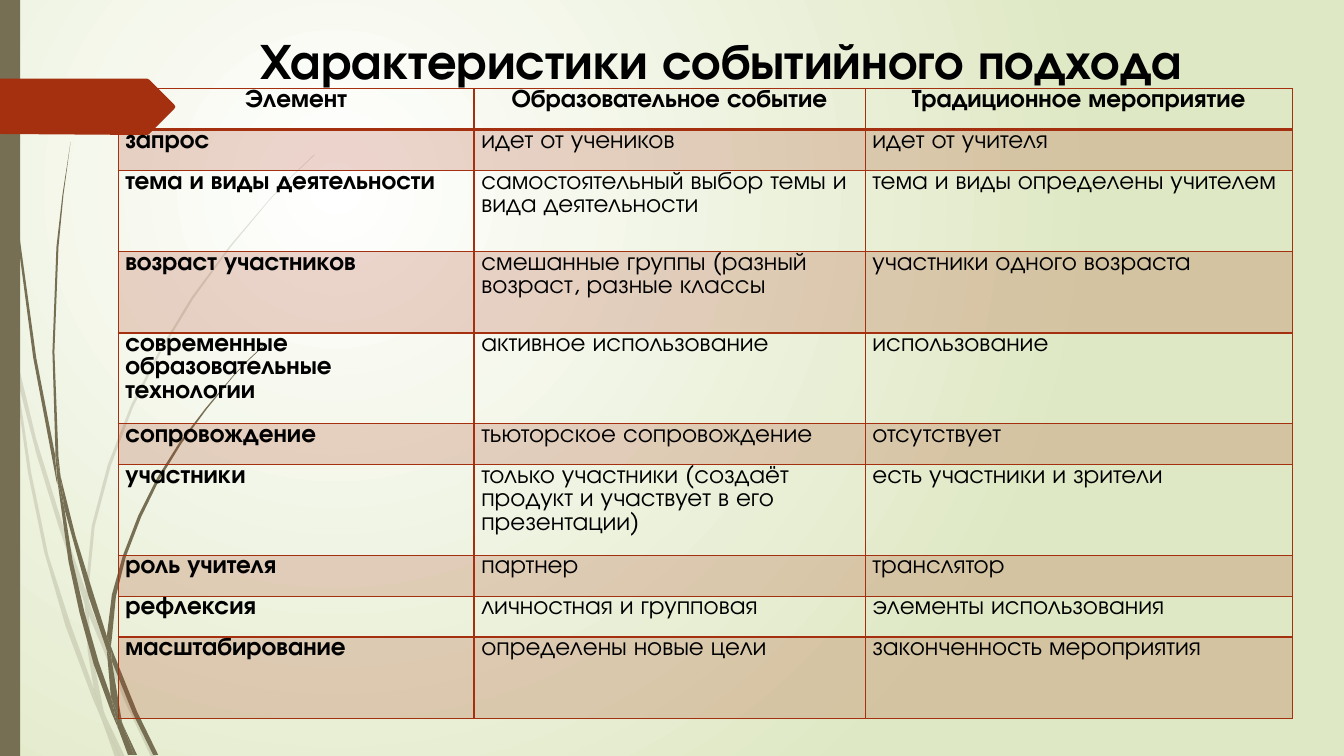
from dataclasses import dataclass

from lxml.etree import SubElement
from pptx import Presentation
from pptx.dml.color import RGBColor
from pptx.enum.shapes import MSO_SHAPE
from pptx.enum.text import MSO_ANCHOR, PP_ALIGN
from pptx.oxml.ns import qn
from pptx.util import Pt


@dataclass(frozen=True)
class Theme:
    font: str = "TeX Gyre Adventor"
    title_size: float = 36
    cell_size: float = 18
    text: str = "000000"
    accent: str = "A53010"
    stem: str = "766F54"
    center: str = "FFFFFF"
    edge: str = "DFE8C4"
    tint: int = 20


THEME = Theme()
GRID = Pt(0.72)  # outline points below are counted in this unit

# Grass blades: each row is one outline
PALE_BLADES = [
    [(11, 350), (9, 322), (0, 282), (0, 299), (10, 344)],
    [(58, 522), (84, 599), (85, 586), (62, 520), (36, 436), (14, 345), (17, 376), (36, 450)],
    [(92, 607), (88, 596), (88, 610), (123, 694), (150, 751), (155, 751), (127, 692)],
    [(119, 751), (124, 751), (105, 711)],
    [(93, 683), (70, 619), (48, 551), (31, 469), (17, 376), (11, 350), (28, 470), (44, 548),
     (65, 621), (92, 693), (101, 714), (99, 707)],
    [(84, 599), (87, 646), (93, 683), (96, 692), (105, 711), (103, 706), (91, 646), (88, 610), (88, 608)],
    [(88, 584), (94, 522), (110, 462), (132, 404), (160, 349), (192, 296), (229, 245), (268, 198),
     (290, 175), (312, 154), (312, 153), (289, 175), (268, 197), (228, 244), (190, 295), (158, 348),
     (130, 402), (107, 461), (91, 522), (85, 584), (85, 586), (88, 596)],
    [(101, 714), (114, 751), (119, 751)],
    [(88, 608), (88, 610), (88, 596), (85, 586), (84, 599)],
    [(96, 692), (93, 683), (99, 707), (101, 714), (119, 751), (105, 711)],
]
DARK_BLADES = [
    [(7, 110), (17, 233), (33, 355), (56, 477), (57, 481), (55, 457), (55, 453), (36, 355),
     (19, 232), (8, 109), (5, 48), (4, 0), (3, 0), (4, 48)],
    [(88, 592), (106, 645), (106, 633), (106, 631), (93, 590), (75, 532), (60, 472), (64, 505)],
    [(113, 649), (110, 641), (111, 656), (132, 708), (152, 749), (157, 749), (136, 706)],
    [(110, 691), (98, 657), (84, 608), (72, 556), (64, 505), (57, 477), (68, 557), (79, 608),
     (93, 659), (111, 708), (117, 722), (116, 717)],
    [(60, 472), (58, 453), (54, 349), (58, 245), (63, 193), (70, 141), (62, 193), (56, 245),
     (52, 349), (55, 449)],
    [(133, 749), (136, 749), (122, 719)],
    [(57, 477), (64, 505), (60, 472), (55, 449), (55, 453)],
    [(111, 633), (115, 592), (125, 552), (140, 513), (158, 476), (180, 440), (205, 406), (231, 374),
     (245, 359), (261, 344), (260, 344), (245, 358), (231, 373), (204, 405), (178, 439), (156, 474),
     (137, 512), (122, 551), (111, 590), (106, 631), (110, 641)],
    [(117, 722), (127, 749), (131, 749)],
    [(106, 645), (110, 691), (116, 706), (122, 719), (121, 716), (111, 656), (109, 651)],
    [(106, 645), (109, 651), (111, 656), (110, 641), (106, 631), (106, 633)],
    [(116, 706), (110, 691), (116, 717), (117, 722), (130, 749), (133, 749), (122, 719)],
]
ARROW = [(0, 78), (146, 78), (148, 79), (173, 104), (174, 106), (173, 108), (148, 133), (146, 134), (0, 133)]

# Table content
SHORT, TALL = 29.2, 58
COLUMN_WIDTHS = [254.2, 279.4, 305.3]
ROWS = [
    (SHORT, "Элемент", "Образовательное событие", "Традиционное мероприятие"),
    (SHORT, "запрос", "идет от учеников", "идет от учителя"),
    (TALL, "тема и виды деятельности", "самостоятельный выбор темы и вида деятельности",
     "тема и виды определены учителем"),
    (TALL, "возраст участников", "смешанные группы (разный возраст, разные классы",
     "участники одного возраста"),
    (TALL, "современные образовательные технологии", "активное использование", "использование"),
    (SHORT, "сопровождение", "тьюторское сопровождение", "отсутствует"),
    (TALL, "участники", "только участники (создаёт продукт и участвует в его презентации)",
     "есть участники и зрители"),
    (SHORT, "роль учителя", "партнер", "транслятор"),
    (SHORT, "рефлексия", "личностная и групповая", "элементы использования"),
    (TALL, "масштабирование", "определены новые цели", "законченность мероприятия"),
]


def paint(fill, color, alpha=100):
    fill.solid()
    fill.fore_color.rgb = RGBColor.from_string(color)
    if alpha < 100:
        # fore_color has no public opacity setting
        color_element = next(fill.fore_color._xFill.iter(qn("a:srgbClr")))
        SubElement(color_element, qn("a:alpha")).set("val", str(alpha * 1000))


def set_background(slide):
    fill = slide.background.fill
    fill.gradient()
    for stop, color, position in zip(fill.gradient_stops, (THEME.center, THEME.edge), (0, 1)):
        stop.color.rgb = RGBColor.from_string(color)
        stop.position = position
    gradient = next(slide.element.iter(qn("a:gradFill")))
    gradient.remove(gradient.find(qn("a:lin")))
    circle = SubElement(gradient, qn("a:path"), path="circle")
    SubElement(circle, qn("a:fillToRect"), l="50000", t="50000", r="100000", b="100000")


def finish(shape, color, alpha=100):
    paint(shape.fill, color, alpha)
    shape.line.fill.background()
    shape.shadow.inherit = False


def add_outline(shapes, points, color, alpha=100):
    builder = shapes.build_freeform(*points[0], scale=GRID)
    builder.add_line_segments(points[1:], close=True)
    finish(builder.convert_to_shape(), color, alpha)


def add_blades(slide, blades, alpha=100):
    group = slide.shapes.add_group_shape()
    for blade in blades:
        add_outline(group.shapes, blade, THEME.stem, alpha)


def write(frame, text, size, bold, align):
    frame.word_wrap = True
    para = frame.paragraphs[0]
    para.text = text
    para.alignment = align
    para.font.name = THEME.font
    para.font.size = Pt(size)
    para.font.bold = bold
    para.font.color.rgb = RGBColor.from_string(THEME.text)


def add_title(slide, text):
    box = slide.shapes.add_textbox(Pt(123.8), Pt(10.8), Pt(783.4), Pt(63.4))
    box.text_frame.vertical_anchor = MSO_ANCHOR.MIDDLE
    write(box.text_frame, text, THEME.title_size, True, PP_ALIGN.CENTER)


def set_borders(cell, top, bottom):
    properties = cell._tc.get_or_add_tcPr()
    for side, width in (("L", 1), ("R", 1), ("T", top), ("B", bottom)):
        line = SubElement(properties, qn(f"a:ln{side}"), w=str(Pt(width)))
        solid = SubElement(line, qn("a:solidFill"))
        SubElement(solid, qn("a:srgbClr"), val=THEME.accent)


def add_comparison(slide):
    frame = slide.shapes.add_table(len(ROWS), len(COLUMN_WIDTHS), Pt(84.4), Pt(63.4),
                                   Pt(sum(COLUMN_WIDTHS)), Pt(sum(row[0] for row in ROWS)))
    table = frame.table
    table.first_row = table.horz_banding = False
    for column, width in zip(table.columns, COLUMN_WIDTHS):
        column.width = Pt(width)
    for r, (height, *texts) in enumerate(ROWS):
        table.rows[r].height = Pt(height)
        for c, text in enumerate(texts):
            cell = table.cell(r, c)
            cell.margin_left = cell.margin_right = Pt(5.2)
            cell.margin_top = cell.margin_bottom = 0
            set_borders(cell, top=2 if r == 1 else 1, bottom=2 if r == 0 else 1)
            if r % 2:
                paint(cell.fill, THEME.accent, THEME.tint)
            else:
                cell.fill.background()
            align = PP_ALIGN.CENTER if r == 0 else PP_ALIGN.LEFT
            write(cell.text_frame, text, THEME.cell_size, r == 0 or c == 0, align)


def main():
    deck = Presentation()
    deck.slide_width, deck.slide_height = Pt(960), Pt(540)
    slide = deck.slides.add_slide(deck.slide_layouts[6])

    # Backdrop
    set_background(slide)
    add_blades(slide, PALE_BLADES, THEME.tint)
    add_blades(slide, DARK_BLADES)
    side_bar = slide.shapes.add_shape(MSO_SHAPE.RECTANGLE, 0, 0, Pt(14.4), Pt(540))
    finish(side_bar, THEME.stem)
    add_outline(slide.shapes, ARROW, THEME.accent)

    # Content
    add_title(slide, "Характеристики событийного подхода")
    add_comparison(slide)
    deck.save("out.pptx")


if __name__ == "__main__":
    main()
